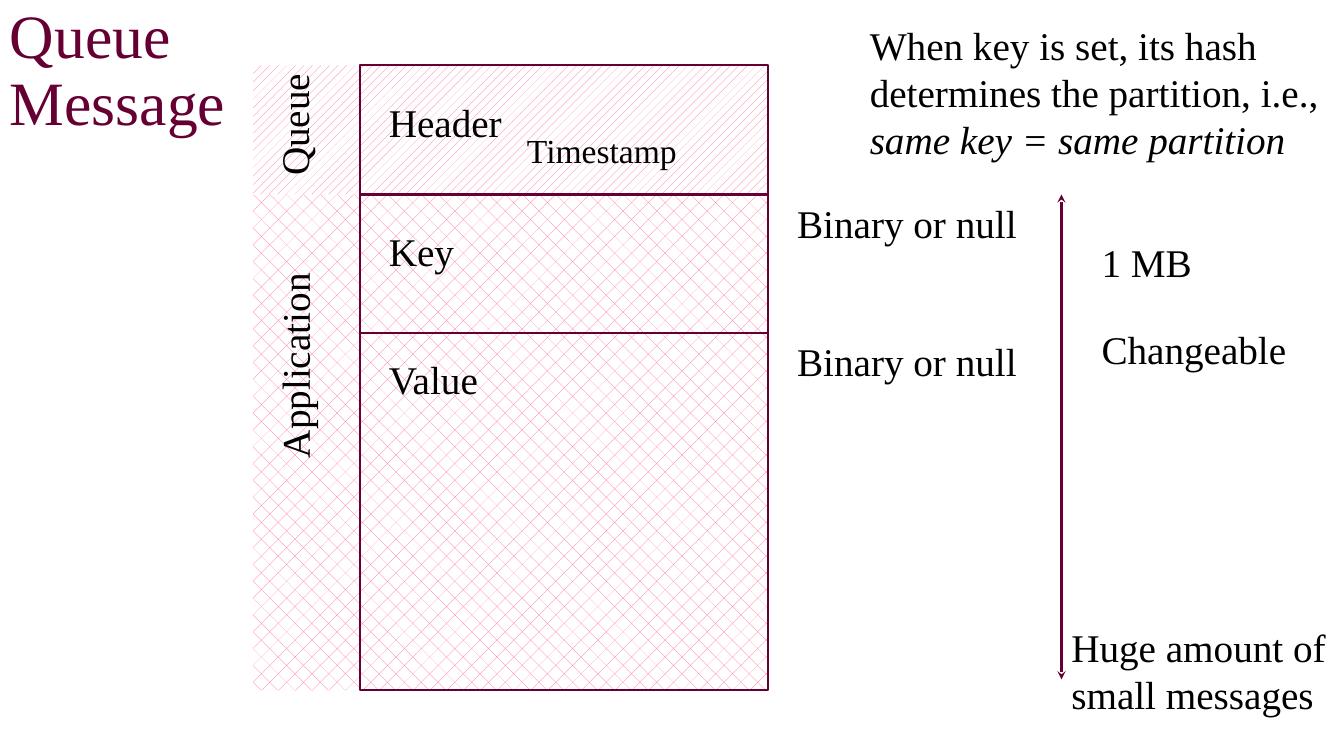
"""Draws the layout of a queue message with its header, key and value."""
from lxml.etree import SubElement
from pptx import Presentation
from pptx.dml.color import RGBColor
from pptx.enum.dml import MSO_PATTERN as Pattern
from pptx.enum.shapes import MSO_CONNECTOR as Link, MSO_SHAPE as Shape
from pptx.enum.text import MSO_ANCHOR as Anchor
from pptx.oxml.ns import qn
from pptx.util import Cm, Pt

FONT, BLACK, WINE, PINK, WHITE = "Times New Roman", "000000", "660033", "FF6699", "FFFFFF"
TOP, HEAD, KEY, END = 1.65, 4.9, 8.38, 17.4
BAND, LEFT, RIGHT = 6.38, 9.07, 19.36
LABEL, NOTE, SIDE, ARROW = 9.55, 19.84, 27.51, 26.75
LINE = 1.45

BANDS = [
    (HEAD, END, Pattern.DIAGONAL_BRICK),
    (TOP, HEAD, Pattern.PERCENT_20),
]
TURNED = [
    ("Application", 4.45, 8.1, 5.94),
    ("Queue", 5.41, 1.96, 3.99),
]
TEXTS = [
    ("Header", LABEL, 2.36, 3.99, LINE),
    ("Key", LABEL, 5.61, 3.99, LINE),
    ("Value", LABEL, 8.84, 3.99, LINE),
    ("Binary or null", NOTE, HEAD, 6.88, LINE),
    ("Binary or null", NOTE, KEY, 6.32, LINE),
    ("1 MB", SIDE, 5.87, 3.28, LINE),
    ("Changeable", SIDE, 8.08, 5.21, LINE),
    ("Huge amount of small messages", ARROW, 15.57, 7.19, 2.64),
]
RULE = "When key is set, its hash determines the partition, i.e., "
RESULT = "same key = same partition"


def color(code):
    return RGBColor.from_string(code)


def style(run, size, code):
    run.font.name, run.font.size = FONT, Pt(size)
    run.font.color.rgb = color(code)


def write(slide, text, x, y, w, h, size=28, code=BLACK):
    box = slide.shapes.add_textbox(Cm(x), Cm(y), Cm(w), Cm(h))
    frame = box.text_frame
    frame.word_wrap = True
    frame.text = text
    style(frame.paragraphs[0].runs[0], size, code)
    return box


def block(slide, x, top, end):
    shape = slide.shapes.add_shape(
        Shape.RECTANGLE, Cm(x), Cm(top), Cm(RIGHT - x), Cm(end - top))
    shape.shadow.inherit = False
    return shape


def stroke(line):
    line.color.rgb = color(WINE)
    line.width = Pt(1.5)


def rule(slide, x1, y1, x2, y2):
    link = slide.shapes.add_connector(Link.STRAIGHT, Cm(x1), Cm(y1), Cm(x2), Cm(y2))
    stroke(link.line)
    props = link._element.spPr
    SubElement(props, qn("a:effectLst"))
    return props.find(qn("a:ln"))


def main():
    deck = Presentation()
    deck.slide_width, deck.slide_height = Cm(33.87), Cm(19.05)
    slide = deck.slides.add_slide(deck.slide_layouts[6])

    for top, end, pattern in BANDS:
        fill = block(slide, BAND, top, end)
        fill.line.fill.background()
        fill.fill.patterned()
        fill.fill.pattern = pattern
        fill.fill.fore_color.rgb = color(PINK)
        fill.fill.back_color.rgb = color(WHITE)
    for text, x, y, w in TURNED:
        write(slide, text, x, y, w, LINE).rotation = 270

    title = write(slide, "Queue Message", 0, 0, 7.62, 3.63, 44, WINE).text_frame
    title.vertical_anchor = Anchor.MIDDLE
    title.paragraphs[0].line_spacing = 0.9

    frame = block(slide, LEFT, TOP, END)
    frame.fill.background()
    stroke(frame.line)
    for y in (HEAD, KEY):
        rule(slide, LEFT, y, RIGHT, y)

    for item in TEXTS:
        write(slide, *item)
    write(slide, "Timestamp", 13.03, 3.15, 5.18, 1.27, 24)

    arrow = rule(slide, ARROW, HEAD, ARROW, 17.12)
    for end in ("a:headEnd", "a:tailEnd"):
        SubElement(arrow, qn(end), type="stealth")

    hint = write(slide, RULE, 21.67, 0.41, 12.19, 3.84)
    run = hint.text_frame.paragraphs[0].add_run()
    run.text = RESULT
    style(run, 28, BLACK)
    run.font.italic = True

    deck.save("out.pptx")


if __name__ == "__main__":
    main()
